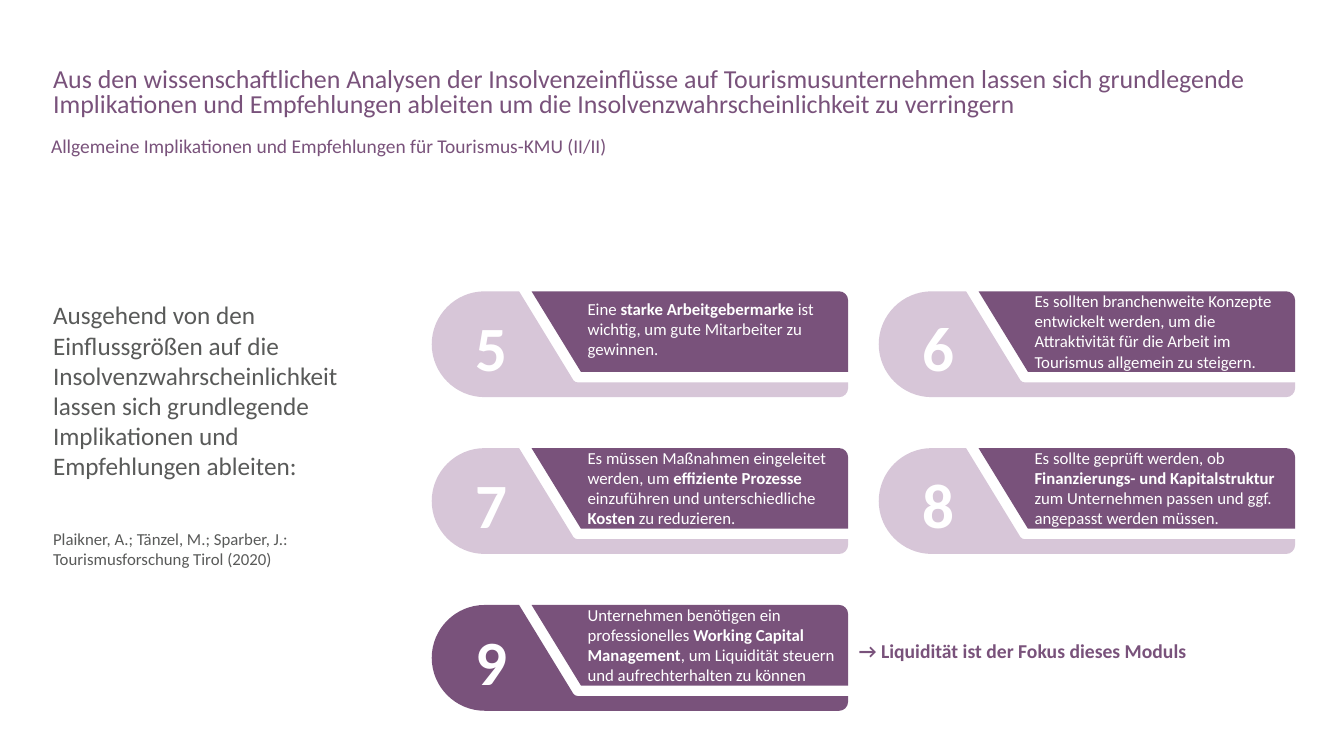
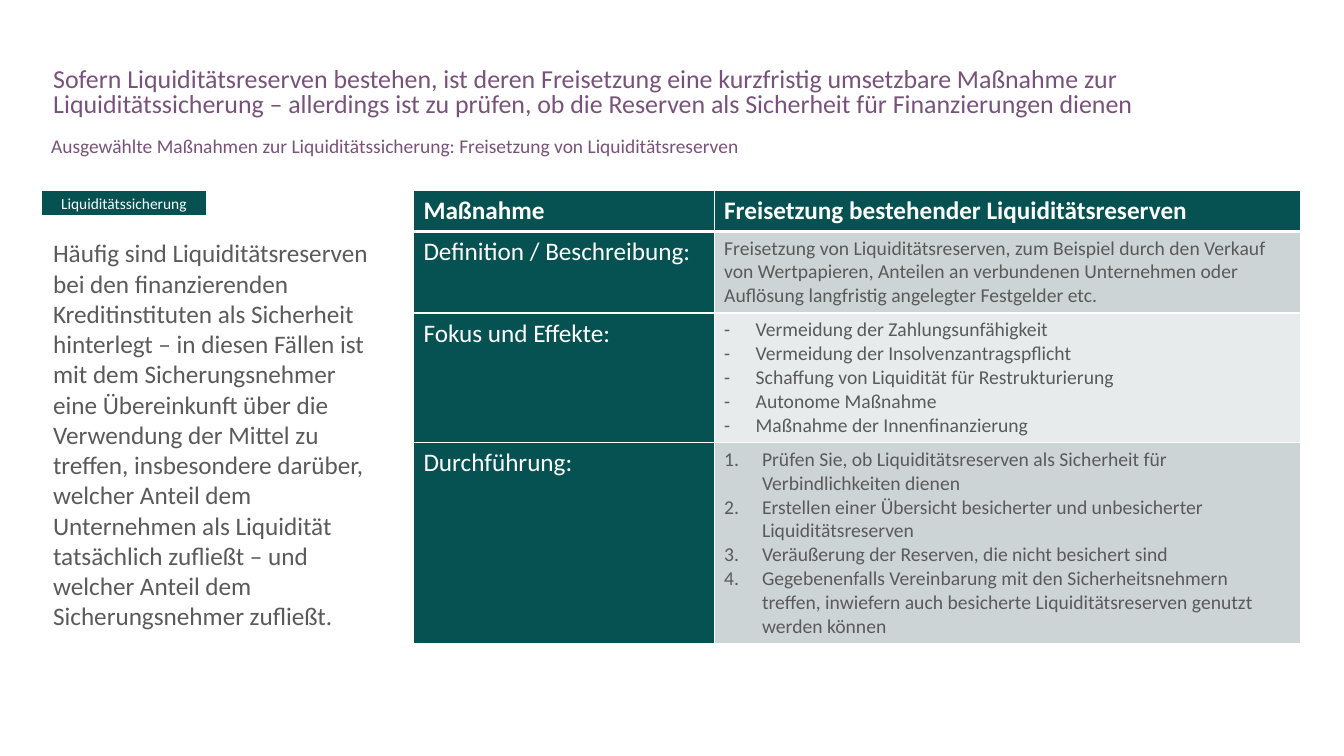
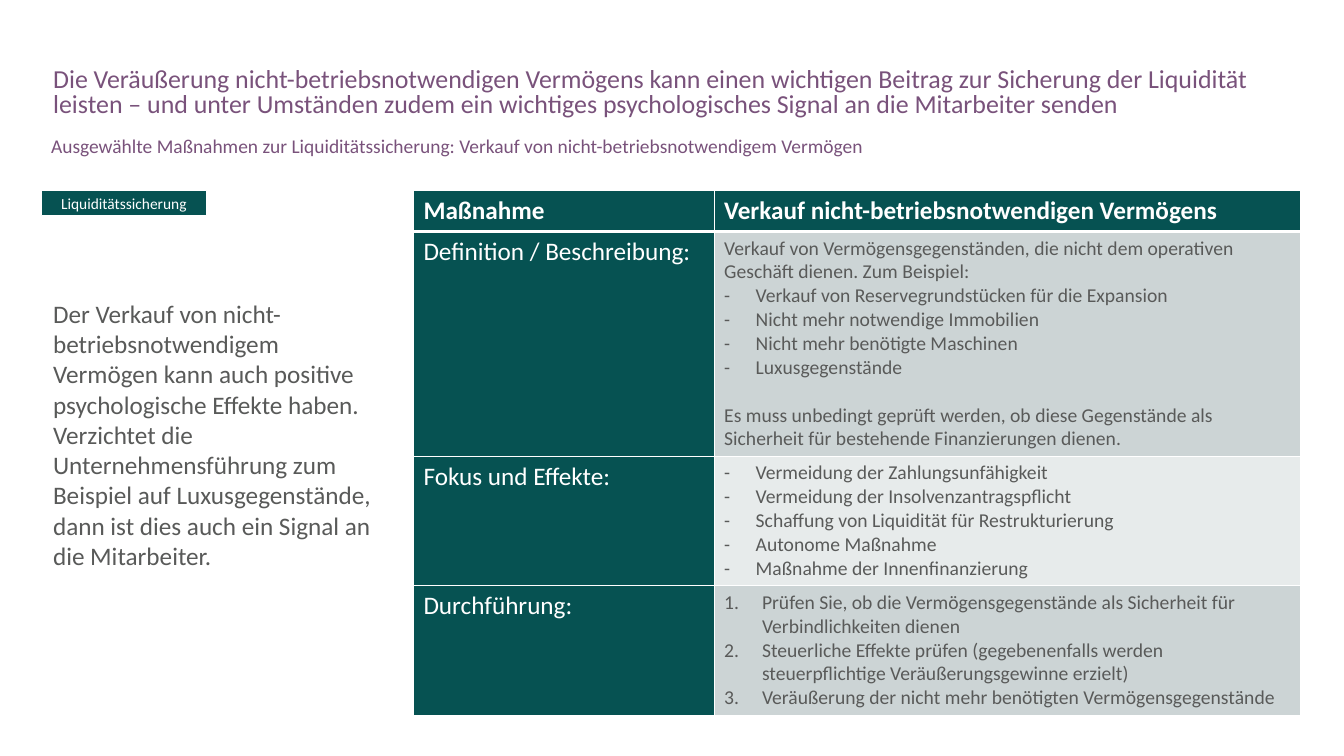
import pptx
import pptx.dml.color
import pptx.enum.shapes
import pptx.enum.text
import pptx.oxml
import pptx.oxml.ns
import pptx.util
from lxml import etree

Pt = pptx.util.Pt
qn = pptx.oxml.ns.qn
ALIGN = pptx.enum.text.PP_ALIGN
ANCHOR = pptx.enum.text.MSO_ANCHOR

COLORS = {
    "plum": "79527B",
    "lilac": "D7C6D8",
    "teal": "065252",
    "mist": "CCD4D5",
    "pale": "E7EBEB",
    "ink": "595A59",
    "white": "FFFFFF",
}
FONT = "Calibri"
DASH_INDENT = 22.5
NUMBER_INDENT = 27
CARD_WIDTH, CARD_HEIGHT, CARD_CORNER = 297.4, 75.6, 6.4
ROUNDNESS = 0.55


def rgb(name):
    return pptx.dml.color.RGBColor.from_string(COLORS[name])


def dashes(*texts):
    return [{"text": text, "bullet": "-"} for text in texts]


def steps(*texts):
    return [{"text": text, "bullet": "1."} for text in texts]


def set_bullet(paragraph, bullet):
    properties = paragraph._p.get_or_add_pPr()
    indent = Pt(DASH_INDENT if bullet == "-" else NUMBER_INDENT)
    properties.set("marL", str(indent))
    properties.set("indent", str(-indent))
    etree.SubElement(properties, qn("a:buFont")).set("typeface", FONT)
    if bullet == "-":
        etree.SubElement(properties, qn("a:buChar")).set("char", bullet)
    else:
        etree.SubElement(properties, qn("a:buAutoNum")).set("type", "arabicPeriod")


def write(frame, content, size=18, color="ink", bold=False, align=ALIGN.LEFT,
          anchor=ANCHOR.TOP, spacing=None, wrap=True):
    """Fill a text frame; ** toggles bold, dict entries override a paragraph's format."""
    frame.word_wrap = wrap
    frame.auto_size = pptx.enum.text.MSO_AUTO_SIZE.NONE
    frame.vertical_anchor = anchor
    for index, entry in enumerate([content] if isinstance(content, str) else content):
        entry = {"text": entry} if isinstance(entry, str) else entry
        paragraph = frame.paragraphs[0] if index == 0 else frame.add_paragraph()
        if "bullet" in entry:
            set_bullet(paragraph, entry["bullet"])
        paragraph.alignment = align
        paragraph.space_before = Pt(entry.get("before", 0))
        if spacing:
            paragraph.line_spacing = spacing
        for position, part in enumerate(entry["text"].split("**")):
            if part:
                run = paragraph.add_run()
                run.text = part
                run.font.name = FONT
                run.font.size = Pt(entry.get("size", size))
                run.font.bold = bold or position % 2 == 1
                run.font.color.rgb = rgb(color)


def quarter(start, corner, end):
    pulls = [tuple(p + ROUNDNESS * (c - p) for p, c in zip(point, corner))
             for point in (start, end)]
    return (*pulls, end)


class Deck:
    """Holds the shared style and the slide being built."""

    def __init__(self):
        self.presentation = pptx.Presentation()
        self.presentation.slide_width = Pt(960)
        self.presentation.slide_height = Pt(540)
        self.slide = None

    def start(self, headline, topic, message):
        self.slide = self.presentation.slides.add_slide(self.presentation.slide_layouts[5])
        title = self.slide.shapes.title
        title.left, title.top, title.width, title.height = map(Pt, (30.8, 45.3, 903, 46))
        write(title.text_frame, headline, size=18.5, color="plum", spacing=0.8)
        self.text((29.4, 96.8, 904, 20), topic, size=13.9, color="plum", spacing=0.7)
        self.text((30.8, 128.7, 251.3, 363), message, anchor=ANCHOR.MIDDLE)

    def text(self, box, content, **style):
        area = self.slide.shapes.add_textbox(*map(Pt, box))
        write(area.text_frame, content, **style)

    def outline(self, left, top, start, segments, color):
        ends = [segment[-1] for segment in segments]
        corners = [(Pt(left + x), Pt(top + y)) for x, y in [start, *ends]]
        builder = self.slide.shapes.build_freeform(*corners[0])
        builder.add_line_segments(corners[1:], close=True)
        outline = builder.convert_to_shape()
        origin = min(x for x, _ in [start, *ends])
        for line, segment in zip(list(outline._element.iter(qn("a:lnTo"))), segments):
            if len(segment) == 3:
                line.tag_name = None
                curve = etree.Element(qn("a:cubicBezTo"))
                for x, y in segment:
                    etree.SubElement(curve, qn("a:pt"), x=str(Pt(x - origin)), y=str(Pt(y)))
                line.getparent().replace(line, curve)
        outline.shadow.inherit = False
        outline.fill.solid()
        outline.fill.fore_color.rgb = rgb(color)
        outline.line.fill.background()

    def card(self, left, top, number, advice, advice_top, frame_color="lilac"):
        inner = CARD_WIDTH - CARD_CORNER
        low = CARD_HEIGHT - CARD_CORNER
        radius = CARD_HEIGHT / 2
        panel = [
            [(CARD_WIDTH, 57.6)],
            [(CARD_WIDTH, CARD_CORNER)],
            quarter((CARD_WIDTH, CARD_CORNER), (CARD_WIDTH, 0), (inner, 0)),
            [(71.3, 0)],
        ]
        frame = [
            quarter((104.4, 65.1), (102.2, 65.1), (101.2, 63.5)),
            [(62.4, 0)],
            [(radius, 0)],
            quarter((radius, 0), (0, 0), (0, radius)),
            quarter((0, radius), (0, CARD_HEIGHT), (radius, CARD_HEIGHT)),
            [(inner, CARD_HEIGHT)],
            quarter((inner, CARD_HEIGHT), (CARD_WIDTH, CARD_HEIGHT), (CARD_WIDTH, low)),
            [(CARD_WIDTH, 65.1)],
        ]
        self.outline(left, top, (106.6, 57.6), panel, "plum")
        self.outline(left, top, (104.4, 65.1), frame, frame_color)
        self.text((left + 24, top + 9, 37.4, 62), number, size=45, color="white",
                  bold=True, align=ALIGN.CENTER, wrap=False)
        self.text((left + 104.2, top + advice_top, 194, 65.5), advice, size=12, color="white")

    def tag(self, label):
        tag = self.slide.shapes.add_shape(
            pptx.enum.shapes.MSO_SHAPE.RECTANGLE, *map(Pt, (29.5, 136, 118, 18)))
        tag.shadow.inherit = False
        tag.fill.solid()
        tag.fill.fore_color.rgb = rgb("teal")
        tag.line.color.rgb = rgb("white")
        tag.line.width = Pt(1)
        write(tag.text_frame, label, size=11, color="white", align=ALIGN.CENTER,
              anchor=ANCHOR.MIDDLE)

    def cell(self, cell, content, fill, edges, **style):
        properties = cell._tc.get_or_add_tcPr()
        for side, width in zip("LRTB", edges):
            line = etree.SubElement(properties, qn("a:ln" + side), w=str(Pt(width)))
            solid = etree.SubElement(line, qn("a:solidFill"))
            etree.SubElement(solid, qn("a:srgbClr")).set("val", COLORS["white"])
        cell.fill.solid()
        cell.fill.fore_color.rgb = rgb(fill)
        write(cell.text_frame, content, **style)

    def measure_table(self, measure, sections, heights):
        rows = [("Maßnahme", measure)] + list(zip(
            ("Definition / Beschreibung:", "Fokus und Effekte:", "Durchführung:"), sections))
        widths = (214.8, 418.8)
        table = self.slide.shapes.add_table(
            len(rows), 2, Pt(295.3), Pt(136.1), Pt(sum(widths)), Pt(sum(heights))).table
        table.horz_banding = False
        for column, width in zip(table.columns, widths):
            column.width = Pt(width)
        for index, (label, details) in enumerate(rows):
            table.rows[index].height = Pt(heights[index])
            header = index == 0
            edges = (1, 1, 3 if index == 1 else 1, 3 if header else 1)
            self.cell(table.cell(index, 0), label, "teal", edges, color="white", bold=header)
            if header:
                self.cell(table.cell(index, 1), details, "teal", edges, color="white", bold=True)
            else:
                self.cell(table.cell(index, 1), details, "mist" if index % 2 else "pale",
                          edges, size=14)


EFFECTS = dashes(
    "Vermeidung der Zahlungsunfähigkeit",
    "Vermeidung der Insolvenzantragspflicht",
    "Schaffung von Liquidität für Restrukturierung",
    "Autonome Maßnahme",
    "Maßnahme der Innenfinanzierung",
)

ADVICE = (
    ("Eine **starke Arbeitgebermarke** ist wichtig, um gute Mitarbeiter zu gewinnen.", 1.8),
    ("Es sollten branchenweite Konzepte entwickelt werden, um die Attraktivität für die "
     "Arbeit im Tourismus allgemein zu steigern.", -3.9),
    ("Es müssen Maßnahmen eingeleitet werden, um **effiziente Prozesse **einzuführen und "
     "unterschiedliche **Kosten** zu reduzieren.", -3.9),
    ("Es sollte geprüft werden, ob **Finanzierungs- und Kapitalstruktur** zum Unternehmen "
     "passen und ggf. angepasst werden müssen.", -3.9),
    ("Unternehmen benötigen ein professionelles **Working Capital Management**, um "
     "Liquidität steuern und aufrechterhalten zu können", -3.9),
)


def main():
    deck = Deck()

    deck.start(
        "Aus den wissenschaftlichen Analysen der Insolvenzeinflüsse auf Tourismusunternehmen "
        "lassen sich grundlegende Implikationen und Empfehlungen ableiten um die "
        "Insolvenzwahrscheinlichkeit zu verringern",
        "Allgemeine Implikationen und Empfehlungen für Tourismus-KMU (II/II)",
        ["Ausgehend von den Einflussgrößen auf die Insolvenzwahrscheinlichkeit lassen sich "
         "grundlegende Implikationen und Empfehlungen ableiten:",
         {"text": "Plaikner, A.; Tänzel, M.; Sparber, J.: Tourismusforschung Tirol (2020)",
          "size": 12, "before": 34}])
    for index, (advice, advice_top) in enumerate(ADVICE):
        row, column = divmod(index, 2)
        focus = index == len(ADVICE) - 1
        deck.card(308.4 + 319.3 * column, 208.1 + 112 * row, str(index + 5), advice,
                  advice_top, "plum" if focus else "lilac")
    deck.text((606.4, 453, 260, 24.5), "→ Liquidität ist der Fokus dieses Moduls",
              size=14, color="plum", bold=True)

    deck.start(
        "Sofern Liquiditätsreserven bestehen, ist deren Freisetzung eine kurzfristig "
        "umsetzbare Maßnahme zur Liquiditätssicherung – allerdings ist zu prüfen, ob die "
        "Reserven als Sicherheit für Finanzierungen dienen",
        "Ausgewählte Maßnahmen zur Liquiditätssicherung: Freisetzung von Liquiditätsreserven",
        "Häufig sind Liquiditätsreserven bei den finanzierenden Kreditinstituten als "
        "Sicherheit hinterlegt – in diesen Fällen ist mit dem Sicherungsnehmer eine "
        "Übereinkunft über die Verwendung der Mittel zu treffen, insbesondere darüber, "
        "welcher Anteil dem Unternehmen als Liquidität tatsächlich zufließt – und welcher "
        "Anteil dem Sicherungsnehmer zufließt.")
    deck.measure_table("Freisetzung bestehender Liquiditätsreserven", (
        "Freisetzung von Liquiditätsreserven, zum Beispiel durch den Verkauf von "
        "Wertpapieren, Anteilen an verbundenen Unternehmen oder Auflösung langfristig "
        "angelegter Festgelder etc.",
        EFFECTS,
        steps(
            "Prüfen Sie, ob Liquiditätsreserven als Sicherheit für Verbindlichkeiten dienen",
            "Erstellen einer Übersicht besicherter und unbesicherter Liquiditätsreserven",
            "Veräußerung der Reserven, die nicht besichert sind",
            "Gegebenenfalls Vereinbarung mit den Sicherheitsnehmern treffen, inwiefern auch "
            "besicherte Liquiditätsreserven genutzt werden können"),
    ), (28.9, 58, 92.6, 143.4))
    deck.tag("Liquiditätssicherung")

    deck.start(
        "Die Veräußerung nicht-betriebsnotwendigen Vermögens kann einen wichtigen Beitrag zur "
        "Sicherung der Liquidität leisten – und unter Umständen zudem ein wichtiges "
        "psychologisches Signal an die Mitarbeiter senden",
        "Ausgewählte Maßnahmen zur Liquiditätssicherung: Verkauf von "
        "nicht-betriebsnotwendigem Vermögen",
        "Der Verkauf von nicht-betriebsnotwendigem Vermögen kann auch positive psychologische "
        "Effekte haben. Verzichtet die Unternehmensführung zum Beispiel auf "
        "Luxusgegenstände, dann ist dies auch ein Signal an die Mitarbeiter.")
    deck.measure_table("Verkauf nicht-betriebsnotwendigen Vermögens", (
        ["Verkauf von Vermögensgegenständen, die nicht dem operativen Geschäft dienen. "
         "Zum Beispiel:",
         *dashes(
             "Verkauf von Reservegrundstücken für die Expansion",
             "Nicht mehr notwendige Immobilien",
             "Nicht mehr benötigte Maschinen",
             "Luxusgegenstände"),
         {"text": "Es muss unbedingt geprüft werden, ob diese Gegenstände als Sicherheit für "
                  "bestehende Finanzierungen dienen.", "before": 17}],
        EFFECTS,
        steps(
            "Prüfen Sie, ob die Vermögensgegenstände als Sicherheit für Verbindlichkeiten "
            "dienen",
            "Steuerliche Effekte prüfen (gegebenenfalls werden steuerpflichtige "
            "Veräußerungsgewinne erzielt)",
            "Veräußerung der nicht mehr benötigten Vermögensgegenstände"),
    ), (28.9, 160.2, 92.6, 92.4))
    deck.tag("Liquiditätssicherung")

    deck.presentation.save("out.pptx")


if __name__ == "__main__":
    main()
